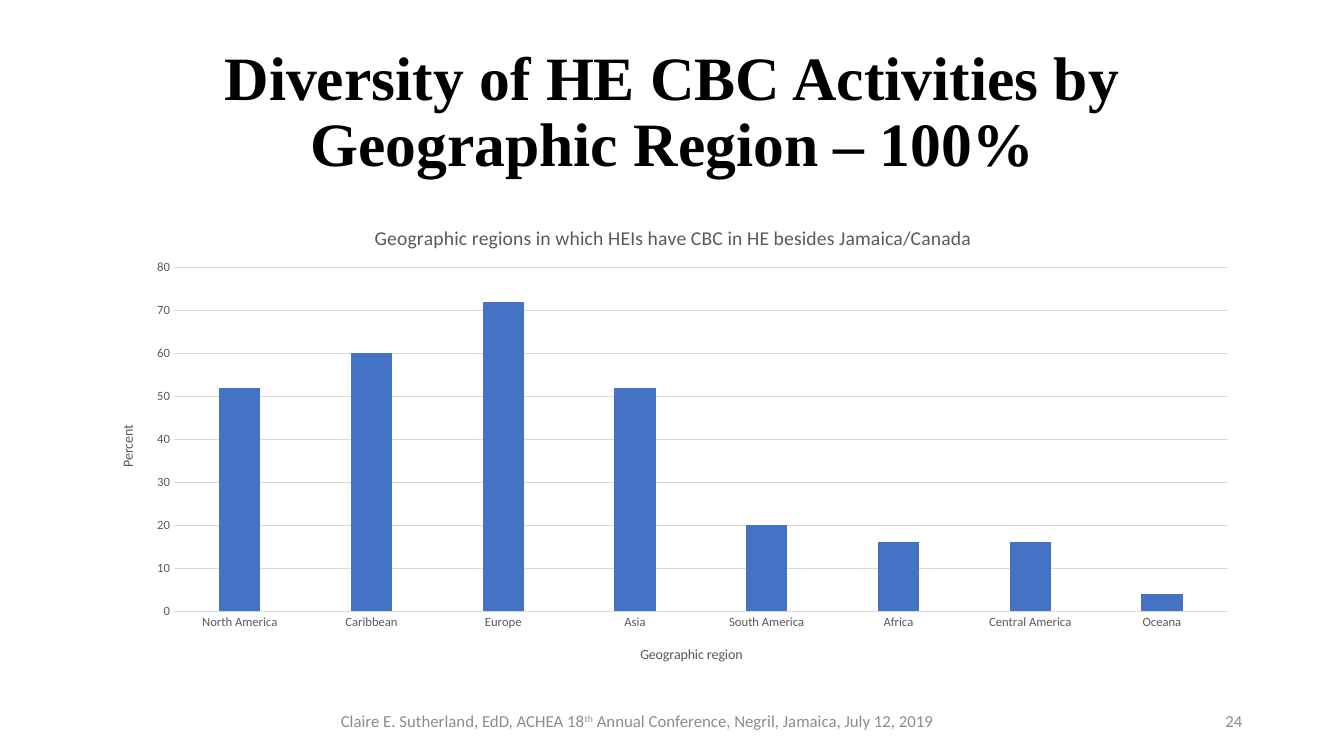
from dataclasses import dataclass

import pptx
import pptx.chart.data
import pptx.dml.color
import pptx.enum.chart
import pptx.enum.text
import pptx.oxml
import pptx.oxml.ns
import pptx.util
from pptx.util import Inches

ALIGN = pptx.enum.text.PP_ALIGN


@dataclass(frozen=True)
class Theme:
    heading_font: str = "Times New Roman"
    body_font: str = "Calibri"
    black: str = "000000"
    label: str = "595959"
    footer: str = "8C8C8C"
    grid: str = "D9D9D9"
    bar: str = "4472C4"
    title_size: int = 44
    chart_title_size: int = 14
    axis_title_size: int = 10
    tick_size: int = 9
    footer_size: int = 12


THEME = Theme()

REGIONS = {
    "North America": 52,
    "Caribbean": 60,
    "Europe": 72,
    "Asia": 52,
    "South America": 20,
    "Africa": 16,
    "Central America": 16,
    "Oceana": 4,
}


def rgb(value):
    return pptx.dml.color.RGBColor.from_string(value)


def format_font(font, size, color, name=THEME.body_font, bold=False):
    font.size = pptx.util.Pt(size)
    font.name = name
    font.bold = bold
    font.color.rgb = rgb(color)


def write(tf, text, align=ALIGN.CENTER, line_spacing=None, raised=(), **style):
    """Fill a frame with one paragraph; pieces listed in raised are superscript."""
    tf.word_wrap = True
    tf.auto_size = pptx.enum.text.MSO_AUTO_SIZE.NONE
    tf.vertical_anchor = pptx.enum.text.MSO_ANCHOR.MIDDLE
    p = tf.paragraphs[0]
    p.alignment = align
    p.line_spacing = line_spacing
    for piece in [text] if isinstance(text, str) else text:
        r = p.add_run()
        r.text = piece
        format_font(r.font, **style)
        if piece in raised:
            r.font._element.set("baseline", "30000")


def add_title(s, text):
    sp = s.shapes.title
    sp.left, sp.top = Inches(0.92), Inches(0.4)
    sp.width, sp.height = Inches(11.5), Inches(1.45)
    write(sp.text_frame, text, line_spacing=0.9, size=THEME.title_size,
          color=THEME.black, name=THEME.heading_font, bold=True)


def add_footer_text(s, text, left, top, width, height, margin_top=0.05, **kwargs):
    sp = s.shapes.add_textbox(Inches(left), Inches(top), Inches(width), Inches(height))
    sp.text_frame.margin_top = Inches(margin_top)
    write(sp.text_frame, text, size=THEME.footer_size, color=THEME.footer, **kwargs)


def place(element, index, x, y, w=None, h=None):
    """Give a chart part a manual layout in fractions of the chart area."""
    for old in element.findall(pptx.oxml.ns.qn("c:layout")):
        element.remove(old)
    settings = {"xMode": "edge", "yMode": "edge", "x": x, "y": y}
    if w is not None:
        settings = {"layoutTarget": "inner", **settings, "w": w, "h": h}
    items = "".join(f'<c:{key} val="{val}"/>' for key, val in settings.items())
    element.insert(index, pptx.oxml.parse_xml(
        f'<c:layout {pptx.oxml.ns.nsdecls("c")}>'
        f"<c:manualLayout>{items}</c:manualLayout></c:layout>"))


def title_chart_part(title, text, size, x, y):
    p = title.text_frame.paragraphs[0]
    r = p.add_run()
    r.text = text
    format_font(r.font, size, THEME.label)
    place(title._element, 1, x, y)


def format_axis(axis, title, x, y):
    axis.major_tick_mark = axis.minor_tick_mark = pptx.enum.chart.XL_TICK_MARK.NONE
    format_font(axis.tick_labels.font, THEME.tick_size, THEME.label)
    title_chart_part(axis.axis_title, title, THEME.axis_title_size, x, y)


def grid_line(line):
    line.color.rgb = rgb(THEME.grid)
    line.width = pptx.util.Pt(0.75)


def add_region_chart(s):
    data = pptx.chart.data.CategoryChartData()
    data.categories = list(REGIONS)
    data.add_series("Series 1", list(REGIONS.values()))
    chart = s.shapes.add_chart(
        pptx.enum.chart.XL_CHART_TYPE.COLUMN_CLUSTERED,
        Inches(0.92), Inches(2), Inches(11.5), Inches(4.76), data).chart
    format_font(chart.font, THEME.axis_title_size, THEME.black)
    chart.has_legend = False
    title_chart_part(chart.chart_title,
                     "Geographic regions in which HEIs have CBC in HE besides Jamaica/Canada",
                     THEME.chart_title_size, 0.24, 0.04)
    place(chart._chartSpace.chart.plotArea, 0, 0.07, 0.137, 0.909, 0.717)

    # Columns
    plot = chart.plots[0]
    plot.gap_width, plot.overlap, plot.vary_by_categories = 219, -27, False
    fill = plot.series[0].format.fill
    fill.solid()
    fill.fore_color.rgb = rgb(THEME.bar)

    # Axes
    format_axis(chart.category_axis, "Geographic region", 0.47, 0.92)
    grid_line(chart.category_axis.format.line)
    val = chart.value_axis
    format_axis(val, "Percent", 0.02, 0.46)
    body = val.axis_title.text_frame._txBody.bodyPr
    body.set("rot", "-5400000")
    body.set("vert", "horz")
    val.minimum_scale, val.maximum_scale, val.major_unit = 0, 80, 10
    val.format.line.fill.background()
    val.has_major_gridlines = True
    grid_line(val.major_gridlines.format.line)


def main():
    prs = pptx.Presentation()
    prs.slide_width, prs.slide_height = Inches(13.33), Inches(7.5)
    s = prs.slides.add_slide(prs.slide_layouts.get_by_name("Title Only"))

    add_title(s, "Diversity of HE CBC Activities by Geographic Region – 100%")
    add_region_chart(s)

    # Footer and page number
    add_footer_text(s, ["Claire E. Sutherland, EdD, ACHEA 18", "th",
                        " Annual Conference, Negril, Jamaica, July 12, 2019"],
                    1.24, 6.76, 10.16, 0.6, margin_top=0.24, raised=("th",))
    add_footer_text(s, "24", 9.42, 6.95, 3, 0.4, align=ALIGN.RIGHT)

    prs.save("out.pptx")


if __name__ == "__main__":
    main()
